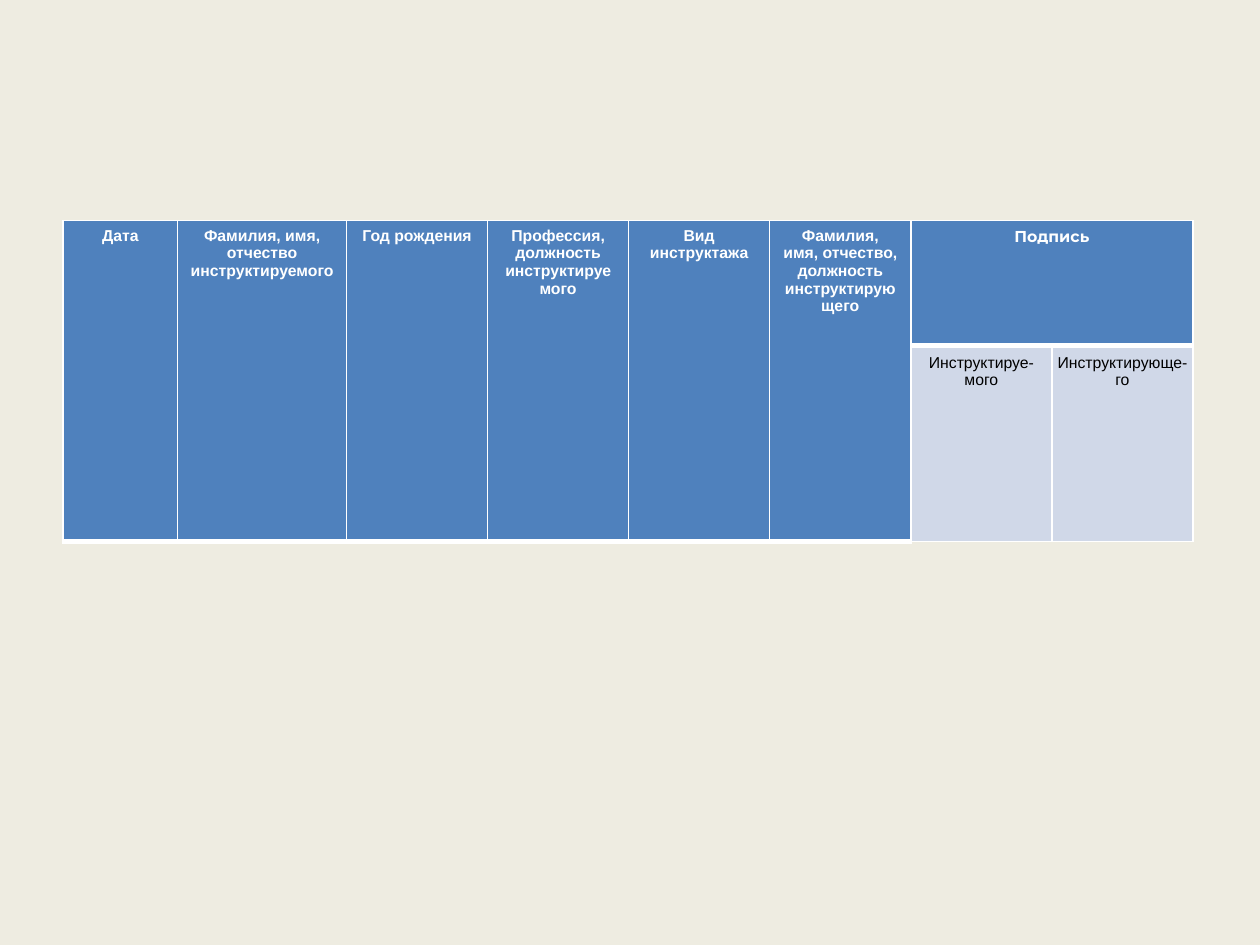
"""Build a slide with the header of a safety briefing log."""
from lxml import etree
from pptx import Presentation
from pptx.dml.color import RGBColor
from pptx.enum.text import PP_ALIGN
from pptx.oxml.ns import qn
from pptx.util import Inches, Pt

CENTER = PP_ALIGN.CENTER
CREAM = RGBColor(0xEE, 0xEC, 0xE1)
BLUE = RGBColor(0x4F, 0x81, 0xBD)
PALE = RGBColor(0xD0, 0xD8, 0xE8)
WHITE = RGBColor(0xFF, 0xFF, 0xFF)
BLACK = RGBColor(0, 0, 0)

WIDTHS = [0.91, 1.34] + [1.12] * 6
HEIGHTS = [0.99, 1.56]
HEADS = [
    "Дата",
    "Фамилия, имя, отчество инструктируемого",
    "Год рождения",
    "Профессия, должность инструктируемого",
    "Вид инструктажа",
    "Фамилия, имя, отчество, должность инструктирующего",
]
SIGNERS = ["Инструктируе-мого", "Инструктирующе-го"]


def write(cell, text, font="Arial", color=WHITE, bold=True):
    par = cell.text_frame.paragraphs[0]
    par.alignment = CENTER
    run = par.add_run()
    run.text = text
    run.font.name = font
    run.font.size = Pt(9)
    run.font.bold = bold
    run.font.color.rgb = color


def paint(cell, color, top, bottom):
    props = cell._tc.get_or_add_tcPr()
    for side, width in zip("LRTB", (1, 1, top, bottom)):
        line = etree.SubElement(props, qn(f"a:ln{side}"), w=str(Pt(width)))
        fill = etree.SubElement(line, qn("a:solidFill"))
        etree.SubElement(fill, qn("a:srgbClr"), val=str(WHITE))
    cell.fill.solid()
    cell.fill.fore_color.rgb = color


prs = Presentation()
prs.slide_width = Inches(10)
prs.slide_height = Inches(7.5)
slide = prs.slides.add_slide(prs.slide_layouts[6])
slide.background.fill.solid()
slide.background.fill.fore_color.rgb = CREAM

frame = slide.shapes.add_table(
    len(HEIGHTS), len(WIDTHS), Inches(0.5), Inches(1.75), Inches(9), Inches(2.55)
)
table = frame.table
for col, width in zip(table.columns, WIDTHS):
    col.width = Inches(width)
for row, height in zip(table.rows, HEIGHTS):
    row.height = Inches(height)

for num, text in enumerate(HEADS):
    head = table.cell(0, num)
    below = table.cell(1, num)
    paint(head, BLUE, 1, 3)
    paint(below, BLUE, 1, 3)
    head.merge(below)
    write(head, text)

first = len(HEADS)
for num, text in enumerate(SIGNERS, first):
    paint(table.cell(0, num), BLUE, 1, 3)
    cell = table.cell(1, num)
    cell.margin_left = cell.margin_right = Inches(0.04)
    cell.margin_top = cell.margin_bottom = Inches(0.07)
    paint(cell, PALE, 3, 1)
    write(cell, text, color=BLACK, bold=False)

sign = table.cell(0, first)
sign.merge(table.cell(0, first + 1))
write(sign, "Подпись", font="Montserrat")

prs.save("out.pptx")
